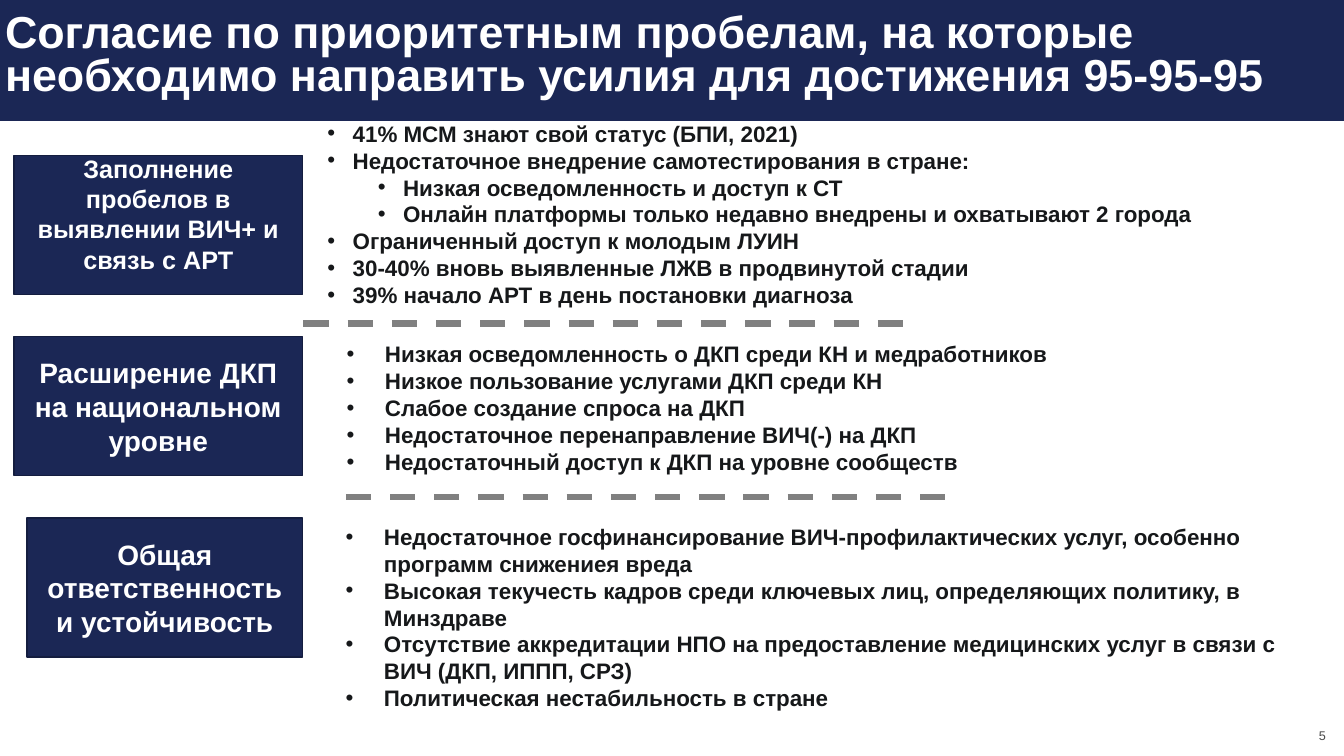
import pptx
import pptx.util
import pptx.dml.color
import pptx.enum.dml
import pptx.enum.shapes
import pptx.enum.text
import pptx.oxml
import lxml.etree
from dataclasses import dataclass

Inches = pptx.util.Inches
Align = pptx.enum.text.PP_ALIGN
Anchor = pptx.enum.text.MSO_ANCHOR

TITLE = "Согласие по приоритетным пробелам, на которые необходимо направить усилия для достижения 95-95-95"
NUMBER = "5"

# Each topic: label, label box, label size, bottom inset, list box, indent, items (level, text)
TOPICS = [
    ("Заполнение пробелов в выявлении ВИЧ+ и связь с АРТ",
     (0.14, 1.54, 2.86, 1.38), 18, 0.27, (3.15, 1.14, 10.1, 1.98), 0.25, [
         (0, "41% МСМ знают свой статус (БПИ, 2021)"),
         (0, "Недостаточное внедрение самотестирования в стране:"),
         (1, "Низкая осведомленность и доступ к СТ"),
         (1, "Онлайн платформы только недавно внедрены и охватывают 2 города"),
         (0, "Ограниченный доступ к молодым ЛУИН"),
         (0, "30-40% вновь выявленные ЛЖВ в продвинутой стадии"),
         (0, "39% начало АРТ в день постановки диагноза"),
     ]),
    ("Расширение ДКП на национальном уровне",
     (0.14, 3.34, 2.86, 1.38), 20, 0.05, (3.34, 3.33, 10.06, 1.99), 0.38, [
         (0, "Низкая осведомленность о ДКП среди КН и медработников"),
         (0, "Низкое пользование услугами ДКП среди КН"),
         (0, "Слабое создание спроса на ДКП"),
         (0, "Недостаточное перенаправление ВИЧ(-) на ДКП"),
         (0, "Недостаточный доступ к ДКП на уровне сообществ"),
     ]),
    ("Общая ответственность и устойчивость",
     (0.27, 5.14, 2.73, 1.38), 20, 0.05, (3.33, 5.14, 9.74, 1.99), 0.38, [
         (0, "Недостаточное госфинансирование ВИЧ-профилактических услуг, особенно программ снижениея вреда"),
         (0, "Высокая текучесть кадров среди ключевых лиц, определяющих политику, в Минздраве"),
         (0, "Отсутствие аккредитации НПО на предоставление медицинских услуг в связи с ВИЧ (ДКП, ИППП, СРЗ)"),
         (0, "Политическая нестабильность в стране"),
     ]),
]
RULES = [(3.01, 3.21), (3.43, 4.93)]
RULE_WIDTH = 6.02


@dataclass
class Theme:
    font: str = "Arial"
    navy: str = "1B2755"
    edge: str = "141D3F"
    white: str = "FFFFFF"
    ink: str = "16181A"
    gray: str = "808080"
    faint: str = "494949"
    title: int = 32
    body: int = 16
    small: int = 9


theme = Theme()


def color(code):
    return pptx.dml.color.RGBColor.from_string(code)


def style(par, size, code, bold=True):
    font = par.font
    font.name, font.size, font.bold = theme.font, pptx.util.Pt(size), bold
    font.color.rgb = color(code)


def add_box(slide, box, fill, edge=None):
    shape = slide.shapes.add_shape(
        pptx.enum.shapes.MSO_SHAPE.RECTANGLE, *map(Inches, box))
    shape.shadow.inherit = False
    shape.fill.solid()
    shape.fill.fore_color.rgb = color(fill)
    if edge:
        shape.line.color.rgb = color(edge)
        shape.line.width = pptx.util.Pt(1)
    else:
        shape.line.fill.background()
    return shape


def add_text(slide, box, anchor):
    frame = slide.shapes.add_textbox(*map(Inches, box)).text_frame
    frame.word_wrap = True
    frame.vertical_anchor = anchor
    return frame


def add_label(slide, text, box, size, inset):
    frame = add_box(slide, box, theme.navy, theme.edge).text_frame
    frame.word_wrap = True
    frame.vertical_anchor = Anchor.MIDDLE
    frame.margin_bottom = Inches(inset)
    par = frame.paragraphs[0]
    par.text, par.alignment = text, Align.CENTER
    style(par, size, theme.white)


def add_list(slide, box, indent, items):
    frame = add_text(slide, box, Anchor.TOP)
    for i, (level, text) in enumerate(items):
        par = frame.add_paragraph() if i else frame.paragraphs[0]
        par.text, par.level = text, level
        props = par._p.get_or_add_pPr()
        props.set("marL", str(Inches(indent + 0.5 * level)))
        props.set("indent", str(-Inches(indent)))
        for tag, key, value in (("a:buFont", "typeface", theme.font),
                                ("a:buChar", "char", "•")):
            lxml.etree.SubElement(props, pptx.oxml.ns.qn(tag)).set(key, value)
        style(par, theme.body, theme.ink)


def add_rule(slide, left, top):
    rule = slide.shapes.add_connector(
        pptx.enum.shapes.MSO_CONNECTOR.STRAIGHT,
        *map(Inches, (left, top, left + RULE_WIDTH, top)))
    rule.line.color.rgb = color(theme.gray)
    rule.line.width = pptx.util.Pt(4.5)
    rule.line.dash_style = pptx.enum.dml.MSO_LINE.DASH
    lxml.etree.SubElement(rule._element.spPr, pptx.oxml.ns.qn("a:effectLst"))


def add_title(slide):
    add_box(slide, (0, 0, 13.33, 1.2), theme.navy)
    frame = add_text(slide, (0.05, 0.11, 13.14, 0.91), Anchor.MIDDLE)
    frame.margin_left = frame.margin_right = 0
    frame.margin_top = frame.margin_bottom = 0
    par = frame.paragraphs[0]
    par.text, par.line_spacing = TITLE, 0.8
    style(par, theme.title, theme.white)


def add_number(slide):
    par = add_text(slide, (12.61, 7.1, 0.64, 0.4), Anchor.MIDDLE).paragraphs[0]
    par.text, par.alignment = NUMBER, Align.RIGHT
    style(par, theme.small, theme.faint, bold=False)


def main():
    deck = pptx.Presentation()
    deck.slide_width, deck.slide_height = Inches(13.33), Inches(7.5)
    slide = deck.slides.add_slide(deck.slide_layouts[6])
    add_title(slide)
    add_number(slide)
    for label, box, size, inset, area, indent, items in TOPICS:
        add_label(slide, label, box, size, inset)
        add_list(slide, area, indent, items)
    for left, top in RULES:
        add_rule(slide, left, top)
    deck.save("out.pptx")


if __name__ == "__main__":
    main()
